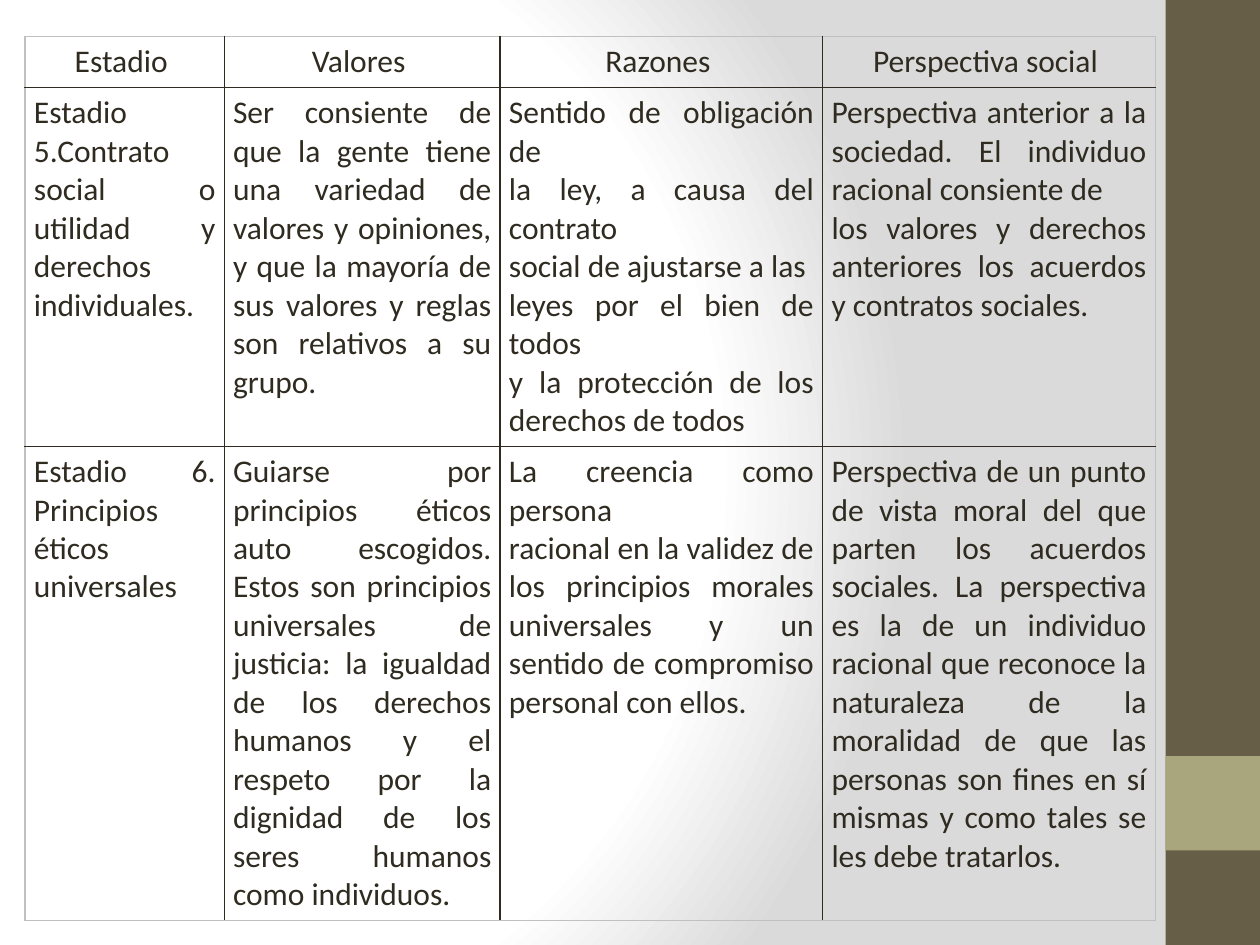
from lxml import etree
from pptx import Presentation
from pptx.dml.color import RGBColor
from pptx.enum.shapes import MSO_SHAPE
from pptx.enum.text import PP_ALIGN
from pptx.oxml import parse_xml
from pptx.util import Inches, Pt

RECT = MSO_SHAPE.RECTANGLE
MID = PP_ALIGN.CENTER
FULL = PP_ALIGN.JUSTIFY
NS = "http://schemas.openxmlformats.org/drawingml/2006/main"
WIDE, HIGH = 10, 7.5

HUES = {
    "ink": "2F2B20",
    "edge": "C0C0C0",
    "bar": "675E47",
    "mark": "A9A57C",
    "white": "FFFFFF",
    "gray": "DADADA",
}
FONT = {"name": "Calibri", "size": Pt(18), "bold": False}
PADS = {
    "margin_left": Inches(0.07),
    "margin_right": Inches(0.07),
    "margin_top": Inches(0.05),
    "margin_bottom": Inches(0.05),
}
PLAIN = {"first_row": False, "horz_banding": False}
COLS = [1.58, 2.19, 2.56, 2.64]
ROWS = [0.4, 2.84, 3.76]

CELLS = [
    [["Estadio "], ["Valores "], ["Razones "], ["Perspectiva social "]],
    [
        ["Estadio 5.Contrato social o utilidad y derechos individuales."],
        ["Ser consiente de que la gente tiene una variedad de valores y "
         "opiniones, y que la mayoría de sus valores y reglas son relativos "
         "a su grupo."],
        ["Sentido de obligación de",
         "la ley, a causa del contrato",
         "social de ajustarse a las",
         "leyes por el bien de todos",
         "y la protección de los derechos de todos"],
        ["Perspectiva anterior a la sociedad. El individuo racional "
         "consiente de",
         "los valores y derechos anteriores los acuerdos y contratos "
         "sociales."],
    ],
    [
        ["Estadio 6. Principios éticos universales "],
        ["Guiarse por principios éticos auto escogidos. Estos son principios "
         "universales de justicia: la igualdad de los derechos humanos y el "
         "respeto por la dignidad de los seres humanos como individuos."],
        ["La creencia como persona",
         "racional en la validez de los principios morales universales y un "
         "sentido de compromiso personal con ellos."],
        ["Perspectiva de un punto de vista moral del que parten los acuerdos "
         "sociales. La perspectiva es la de un individuo racional que "
         "reconoce la naturaleza de la moralidad de que las personas son "
         "fines en sí mismas y como tales se les debe tratarlos."],
    ],
]


def hue(name):
    return RGBColor.from_string(HUES[name])


def apply(item, form):
    for key, value in form.items():
        setattr(item, key, value)


def paint_back(slide):
    fill = slide.background.fill
    fill.gradient()
    grad = slide.element.find(f".//{{{NS}}}gradFill")
    stops = "".join(
        f'<a:gs pos="{pos * 1000}"><a:srgbClr val="{HUES[name]}"/></a:gs>'
        for pos, name in [(0, "white"), (75, "white"), (100, "gray")]
    )
    grad.getparent().replace(grad, parse_xml(
        f'<a:gradFill xmlns:a="{NS}" rotWithShape="1"><a:gsLst>{stops}</a:gsLst>'
        '<a:path path="circle"><a:fillToRect l="20000" t="50000" '
        'r="100000" b="50000"/></a:path></a:gradFill>'
    ))


def add_block(slide, left, top, width, height, name):
    box = slide.shapes.add_shape(
        RECT, *map(Inches, (left * WIDE, top * HIGH, width * WIDE, height * HIGH))
    )
    box.shadow.inherit = False
    box.fill.solid()
    box.fill.fore_color.rgb = hue(name)
    box.line.fill.background()


def add_lines(cell, sides):
    props = cell._tc.get_or_add_tcPr()
    for spot, (side, name) in enumerate(sides.items()):
        line = etree.Element(f"{{{NS}}}ln{side}", w=str(Pt(1)))
        fill = etree.SubElement(line, f"{{{NS}}}solidFill")
        etree.SubElement(fill, f"{{{NS}}}srgbClr", val=HUES[name])
        props.insert(spot, line)


def fill_cell(cell, texts, align):
    apply(cell, PADS)
    cell.fill.background()
    frame = cell.text_frame
    for spot, text in enumerate(texts):
        para = frame.add_paragraph() if spot else frame.paragraphs[0]
        para.alignment = align
        run = para.add_run()
        run.text = text
        apply(run.font, FONT)
        run.font.color.rgb = hue("ink")


def add_grid(slide, left, top):
    table = slide.shapes.add_table(
        len(ROWS), len(COLS),
        *map(Inches, (left, top, sum(COLS), sum(ROWS)))
    ).table
    apply(table, PLAIN)
    for col, width in zip(table.columns, COLS):
        col.width = Inches(width)
    for row, height in zip(table.rows, ROWS):
        row.height = Inches(height)
    for r, line in enumerate(CELLS):
        for c, texts in enumerate(line):
            cell = table.cell(r, c)
            fill_cell(cell, texts, FULL if r else MID)
            outer = {
                "L": c == 0,
                "R": c == len(COLS) - 1,
                "T": r == 0,
                "B": r == len(ROWS) - 1,
            }
            add_lines(cell, {
                side: "edge" if out else "ink" for side, out in outer.items()
            })


def main():
    deck = Presentation()
    apply(deck, {"slide_width": Inches(WIDE), "slide_height": Inches(HIGH)})
    slide = deck.slides.add_slide(deck.slide_layouts[6])
    paint_back(slide)
    add_block(slide, 0.925, 0, 0.075, 1, "bar")
    add_block(slide, 0.925, 0.8, 0.075, 0.1, "mark")
    add_grid(slide, 0.2, 0.29)
    deck.save("out.pptx")


if __name__ == "__main__":
    main()
